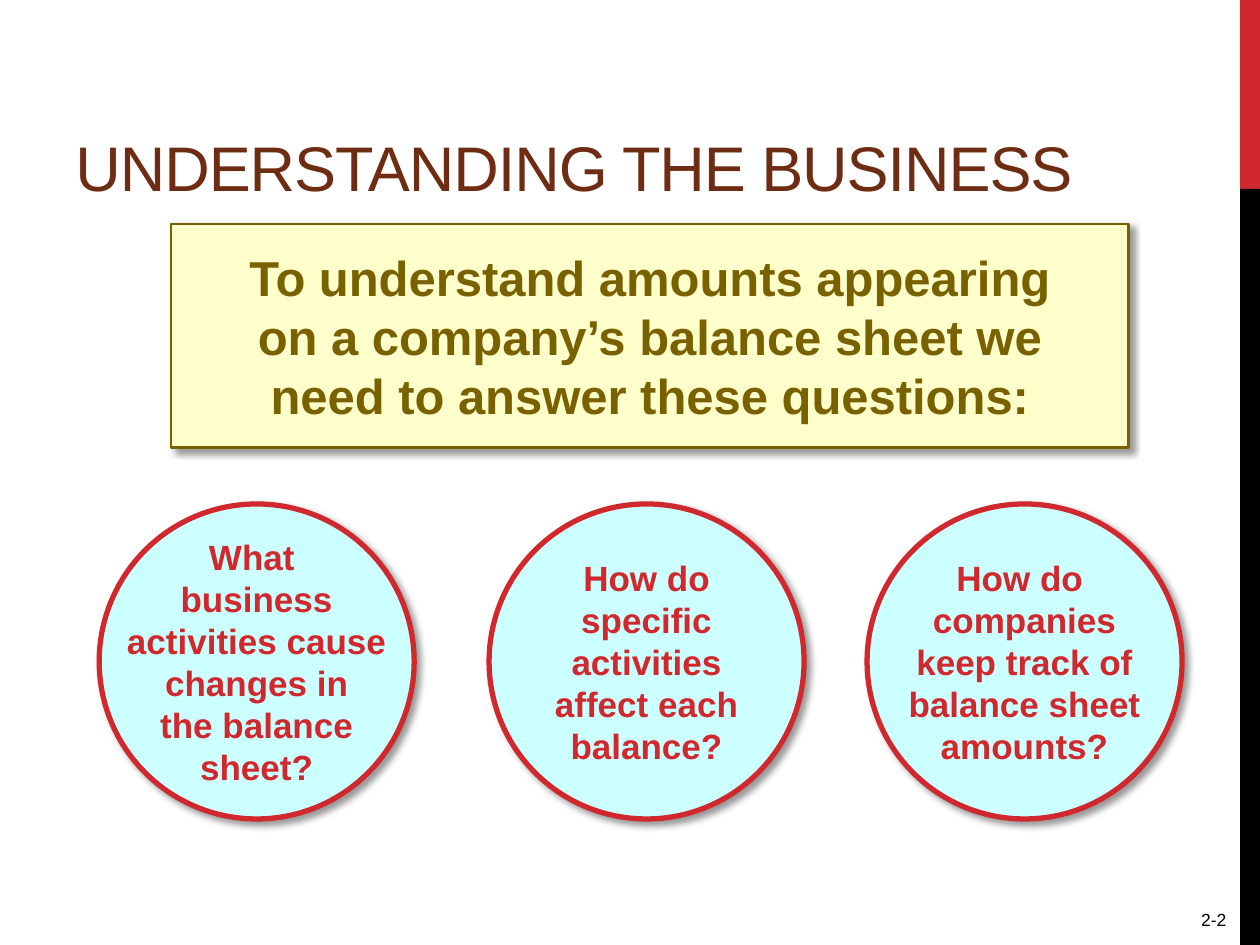
from lxml.etree import SubElement
from pptx import Presentation
from pptx.dml.color import RGBColor
from pptx.enum.shapes import MSO_SHAPE
from pptx.enum.text import MSO_ANCHOR, PP_ALIGN
from pptx.oxml.ns import qn
from pptx.util import Cm, Pt

RED, BLACK, BROWN, OLIVE = "D1282E", "000000", "6E2C12", "7A6100"
CREAM, AQUA = "FFFFCC", "CCFFFF"
QUESTIONS = [
    (2.0, ["What ", "business", "activities cause", "changes in", "the balance", "sheet?"]),
    (9.86, ["How do", "specific", "activities", "affect each", "balance?"]),
    (17.48, ["How do ", "companies", "keep track of", "balance sheet", "amounts?"]),
]


def color(value):
    return RGBColor.from_string(value)


class SlideBuilder:
    font_name = "Arial"

    def __init__(self, page):
        self.page = page

    def fill_text(self, box, lines, size, ink, align, anchor, bold=False, spacing=None):
        frame = box.text_frame
        frame.vertical_anchor = anchor
        frame.text = "\n".join(lines)
        for para in frame.paragraphs:
            para.alignment = align
            font = para.font
            font.name, font.size, font.bold = self.font_name, Pt(size), bold
            font.color.rgb = color(ink)
            if spacing is not None:
                for span in para.runs:
                    span._r.get_or_add_rPr().set("spc", str(round(spacing * 100)))

    def text(self, left, top, width, height, line, size, ink, align, anchor, spacing=None):
        box = self.page.shapes.add_textbox(Cm(left), Cm(top), Cm(width), Cm(height))
        box.text_frame.word_wrap = True
        self.fill_text(box, [line], size, ink, align, anchor, spacing=spacing)

    def shape(self, kind, left, top, width, height, fill):
        box = self.page.shapes.add_shape(kind, Cm(left), Cm(top), Cm(width), Cm(height))
        box.shadow.inherit = False
        box.fill.solid()
        box.fill.fore_color.rgb = color(fill)
        box.line.fill.background()
        return box

    def panel(self, kind, left, top, width, height, fill, ink, weight, lines, size):
        box = self.shape(kind, left, top, width, height, fill)
        box.line.color.rgb = color(ink)
        box.line.width = Pt(weight)
        self.cast_shadow(box)
        box.text_frame.word_wrap = False
        self.fill_text(box, lines, size, ink, PP_ALIGN.CENTER, MSO_ANCHOR.MIDDLE, bold=True)

    def cast_shadow(self, box):
        effects = box._element.spPr.find(qn("a:effectLst"))
        shadow = SubElement(effects, qn("a:outerShdw"), blurRad=str(Pt(4)), dist=str(Pt(3)),
                            dir=str(45 * 60000), algn="tl", rotWithShape="0")
        tint = SubElement(shadow, qn("a:srgbClr"), val=BLACK)
        SubElement(tint, qn("a:alpha"), val="40000")


def main():
    deck = Presentation()
    deck.slide_width, deck.slide_height = Cm(25.4), Cm(19.05)
    builder = SlideBuilder(deck.slides.add_slide(deck.slide_layouts[6]))

    builder.shape(MSO_SHAPE.RECTANGLE, 25, 0, 0.4, 3.81, RED)
    builder.shape(MSO_SHAPE.RECTANGLE, 25, 3.81, 0.4, 15.24, BLACK)
    builder.text(21.79, 18.21, 3.18, 0.68, "2-2", 10, BLACK, PP_ALIGN.RIGHT, MSO_ANCHOR.TOP)
    builder.text(1.27, 0.43, 23.29, 3.81, "UNDERSTANDING THE BUSINESS", 36, BROWN,
                 PP_ALIGN.LEFT, MSO_ANCHOR.BOTTOM, spacing=-0.6)
    builder.panel(MSO_SHAPE.RECTANGLE, 3.45, 4.52, 19.3, 4.5, CREAM, OLIVE, 1.5,
                  ["To understand amounts appearing", "on a company’s balance sheet we",
                   "need to answer these questions:"], 28)
    for left, lines in QUESTIONS:
        builder.panel(MSO_SHAPE.OVAL, left, 10.16, 6.35, 6.35, AQUA, RED, 3, lines, 20)

    deck.save("out.pptx")


if __name__ == "__main__":
    main()
